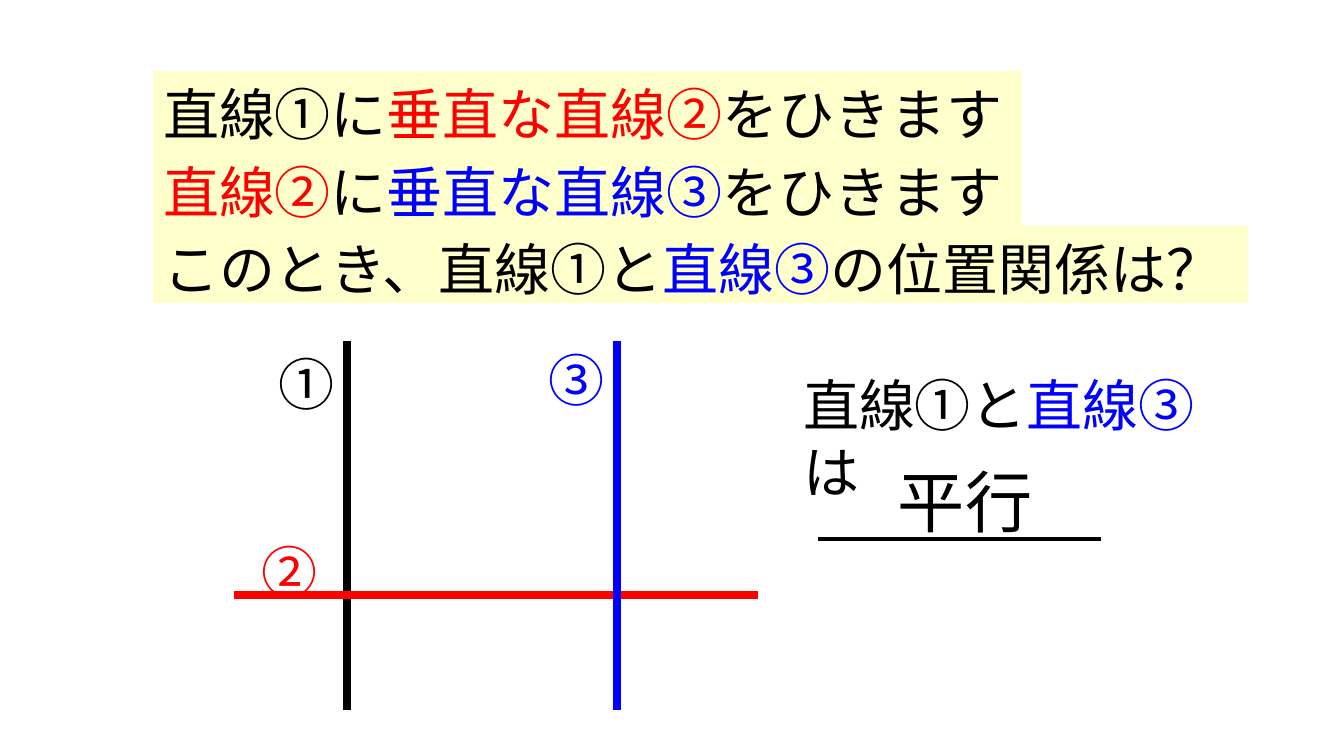
import pptx
import pptx.util
import pptx.dml.color
import pptx.enum.shapes
import pptx.enum.text
import pptx.oxml.ns
import lxml.etree

Pt = pptx.util.Pt
FONT = "Noto Sans CJK JP"
BLACK, RED, BLUE, CREAM = "000000", "FF0000", "0000FF", "FFFFCC"

# Problem statement: width of the band, then its runs
BANDS = [
    (620.6, [("直線①に", BLACK), ("垂直な直線②", RED), ("をひきます", BLACK)]),
    (620.6, [("直線②", RED), ("に", BLACK), ("垂直な直線③", BLUE),
             ("をひきます", BLACK)]),
    (782, [("このとき、直線①と", BLACK), ("直線③", BLUE),
           ("の位置関係は？", BLACK)]),
]
# Lines: x1, y1, x2, y2, colour, width
LINES = [
    (247.7, 243.4, 247.7, 506.9, BLACK, 6),
    (167, 424.8, 541.4, 424.8, RED, 6),
    (440.6, 243.4, 440.6, 506.9, BLUE, 6),
    (584.6, 385.2, 786.2, 385.2, BLACK, 3),
]
# Line numbers: left, top, sign, colour
MARKS = [
    (192.2, 243.4, "①", BLACK),
    (180, 377.3, "②", RED),
    (384.5, 240.5, "③", BLUE),
]
# Answer: "\n" is a line break
CLAIM = [("直線①と", BLACK), ("直線③", BLUE), ("\n", BLACK), ("は", BLACK)]
ANSWER = [("平行", BLACK)]

LEFT, TOP, ROW = 109.4, 50.4, 55.4
SIZE, BIG = 40, 48

deck = pptx.Presentation()
deck.slide_width, deck.slide_height = Pt(960), Pt(540)
slide = deck.slides.add_slide(deck.slide_layouts[6])
shapes = slide.shapes


def color(code):
    return pptx.dml.color.RGBColor.from_string(code)


def write(shape, runs, size=SIZE, wrap=False):
    frame = shape.text_frame
    frame.word_wrap = wrap
    frame.vertical_anchor = pptx.enum.text.MSO_ANCHOR.TOP
    frame.margin_top, frame.margin_bottom = Pt(6.4), Pt(0.8)
    para = frame.paragraphs[0]
    para.alignment = pptx.enum.text.PP_ALIGN.LEFT
    para.line_spacing = Pt(size * 1.2)
    for text, code in runs:
        if text == "\n":
            para.add_line_break()
            continue
        run = para.add_run()
        run.text = text
        run.font.size = Pt(size)
        run.font.name = FONT
        run.font.color.rgb = color(code)
        # East Asian typeface
        east = lxml.etree.SubElement(run.font._element,
                                     pptx.oxml.ns.qn("a:ea"))
        east.set("typeface", FONT)


def label(x, y, w, h, runs, size=SIZE, wrap=False):
    box = shapes.add_textbox(Pt(x), Pt(y), Pt(w), Pt(h))
    write(box, runs, size, wrap)


# Stacked bands with the problem
for row, (width, runs) in enumerate(BANDS):
    band = shapes.add_shape(pptx.enum.shapes.MSO_SHAPE.RECTANGLE, Pt(LEFT),
                            Pt(TOP + row * ROW), Pt(width), Pt(ROW))
    band.shadow.inherit = False
    band.fill.solid()
    band.fill.fore_color.rgb = color(CREAM)
    band.line.fill.background()
    write(band, runs)

# Figure lines and answer rule
for x1, y1, x2, y2, code, width in LINES:
    line = shapes.add_connector(pptx.enum.shapes.MSO_CONNECTOR.STRAIGHT,
                                Pt(x1), Pt(y1), Pt(x2), Pt(y2))
    line.line.color.rgb = color(code)
    line.line.width = Pt(width)
    lxml.etree.SubElement(line._element.spPr,
                          pptx.oxml.ns.qn("a:effectLst"))

# Line numbers
for x, y, sign, code in MARKS:
    label(x, y, 54.7, ROW, [(sign, code)])

# Answer
label(566.6, 258.5, 349.9, ROW, CLAIM, wrap=True)
label(634.3, 322.6, 116.6, 65.5, ANSWER, BIG, True)

deck.save("out.pptx")
